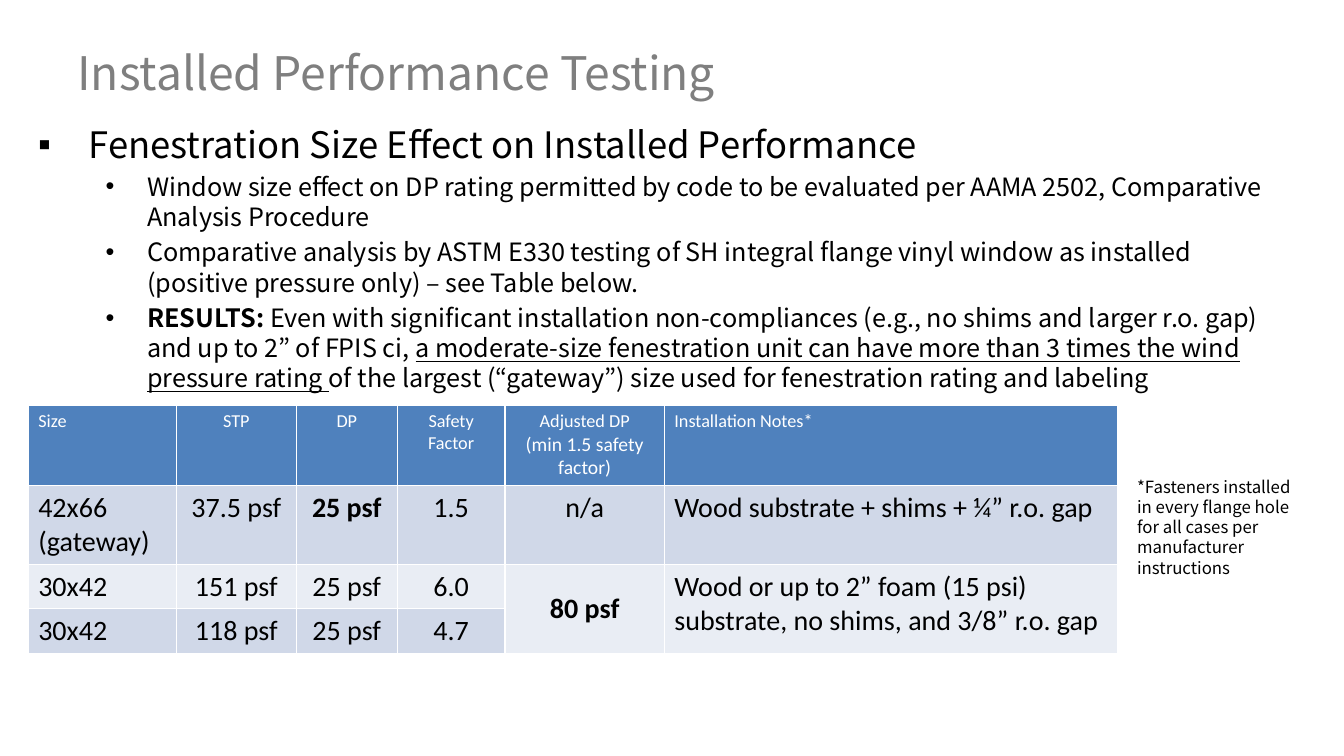
from pptx import Presentation
from pptx.dml.color import RGBColor
from pptx.enum.text import MSO_ANCHOR as Anchor, PP_ALIGN as Align
from pptx.oxml.ns import qn
from pptx.util import Inches, Pt
from lxml.etree import SubElement

TEXT_FONT = "Noto Sans CJK JP"
TABLE_FONT = "Calibri"
COLUMN_WIDTHS = [1.47, 1.19, 1, 1.07, 1.58, 4.5]
ROW_HEIGHTS = [0.8, 0.78, 0.44, 0.44]
ROW_FILLS = ["4F81BD", "D0D8E8", "E9EDF4", "D0D8E8"]
LEFT_COLUMNS = (0, 5)
BOLD_CELLS = ((1, 2), (2, 4))
ROWS = [
    ["Size", "STP", "DP", "Safety Factor",
     "Adjusted DP\n(min 1.5 safety factor)", "Installation Notes*"],
    ["42x66\n(gateway)", "37.5 psf", "25 psf", "1.5", "n/a",
     "Wood substrate + shims + ¼” r.o. gap"],
    ["30x42", "151 psf", "25 psf", "6.0", "80 psf",
     "Wood or up to 2” foam (15 psi) substrate, no shims, and 3/8” r.o. gap"],
    ["30x42", "118 psf", "25 psf", "4.7"],
]
BULLETS = [
    [("Window size effect on DP rating permitted by code to be evaluated per "
      "AAMA 2502, Comparative Analysis Procedure", "")],
    [("Comparative analysis by ASTM E330 testing of SH integral flange vinyl "
      "window as installed (positive pressure only) – see Table below.", "")],
    [("RESULTS: ", "b"),
     ("Even with significant installation non-compliances (e.g., no shims and "
      "larger r.o. gap) and up to 2” of FPIS ci, ", ""),
     ("a moderate-size fenestration unit can have more than 3 times the wind "
      "pressure rating ", "u"),
     ("of the largest (“gateway”) size used for fenestration rating and "
      "labeling", "")],
]


def rgb(color):
    return RGBColor.from_string(color)


def add_run(p, text, size, font=TEXT_FONT, color="000000", style=""):
    """Style is "b" for bold, "u" for underlined, or empty."""
    r = p.add_run()
    r.text = text
    r.font.size = Pt(size)
    r.font.name = font
    r.font.color.rgb = rgb(color)
    r.font.bold = style == "b"
    r.font.underline = style == "u"


def add_textbox(slide, left, top, width, height, anchor=Anchor.TOP):
    box = slide.shapes.add_textbox(
        Inches(left), Inches(top), Inches(width), Inches(height))
    tf = box.text_frame
    tf.word_wrap = True
    tf.vertical_anchor = anchor
    return tf


def set_bullet(p, char, margin, hanging):
    pPr = p._p.get_or_add_pPr()
    pPr.set("marL", str(Inches(margin)))
    pPr.set("indent", str(-Inches(hanging)))
    SubElement(pPr, qn("a:buFont")).set("typeface", "Arial")
    SubElement(pPr, qn("a:buChar")).set("char", char)


def add_body(slide):
    tf = add_textbox(slide, 0.28, 1.14, 12.39, 2.85)
    p = tf.paragraphs[0]
    set_bullet(p, "▪", 0.5, 0.5)
    p.line_spacing = Pt(33)
    add_run(p, "Fenestration Size Effect on Installed Performance", 26)
    for runs in BULLETS:
        p = tf.add_paragraph()
        p.level = 1
        set_bullet(p, "•", 1.08, 0.41)
        p.line_spacing = Pt(21.6)
        p.space_before = Pt(3.6)
        for text, style in runs:
            add_run(p, text, 18, style=style)


def fill_cell(cell, row, col, text):
    for i, line in enumerate(text.split("\n")):
        tf = cell.text_frame
        p = tf.add_paragraph() if i else tf.paragraphs[0]
        p.alignment = Align.LEFT if col in LEFT_COLUMNS else Align.CENTER
        size = 20 if row else 13 + i
        add_run(p, line, size, TABLE_FONT, "000000" if row else "FFFFFF",
                "b" if (row, col) in BOLD_CELLS else "")


def add_results_table(slide):
    table = slide.shapes.add_table(
        len(ROWS), len(COLUMN_WIDTHS), Inches(0.28), Inches(4.02),
        Inches(sum(COLUMN_WIDTHS)), Inches(sum(ROW_HEIGHTS))).table
    for column, width in zip(table.columns, COLUMN_WIDTHS):
        column.width = Inches(width)
    for row, height in enumerate(ROW_HEIGHTS):
        table.rows[row].height = Inches(height)
        for col in range(len(COLUMN_WIDTHS)):
            cell = table.cell(row, col)
            cell.fill.solid()
            cell.fill.fore_color.rgb = rgb(ROW_FILLS[row])
        for col, text in enumerate(ROWS[row]):
            fill_cell(table.cell(row, col), row, col, text)
    for col in (4, 5):
        table.cell(2, col).merge(table.cell(3, col))
    table.cell(2, 4).vertical_anchor = Anchor.MIDDLE


def main():
    prs = Presentation()
    prs.slide_width, prs.slide_height = Inches(13.33), Inches(7.5)
    slide = prs.slides.add_slide(prs.slide_layouts[6])
    title = add_textbox(slide, 0.67, 0.22, 12, 0.99, Anchor.MIDDLE)
    add_run(title.paragraphs[0], "Installed Performance Testing", 33,
            color="7F7F7F")
    add_body(slide)
    add_results_table(slide)
    note = add_textbox(slide, 11.18, 4.68, 1.89, 1.11).paragraphs[0]
    note.line_spacing = Pt(14.4)
    add_run(note, "*Fasteners installed in every flange hole for all cases per "
            "manufacturer instructions", 12)
    prs.save("out.pptx")


if __name__ == "__main__":
    main()
